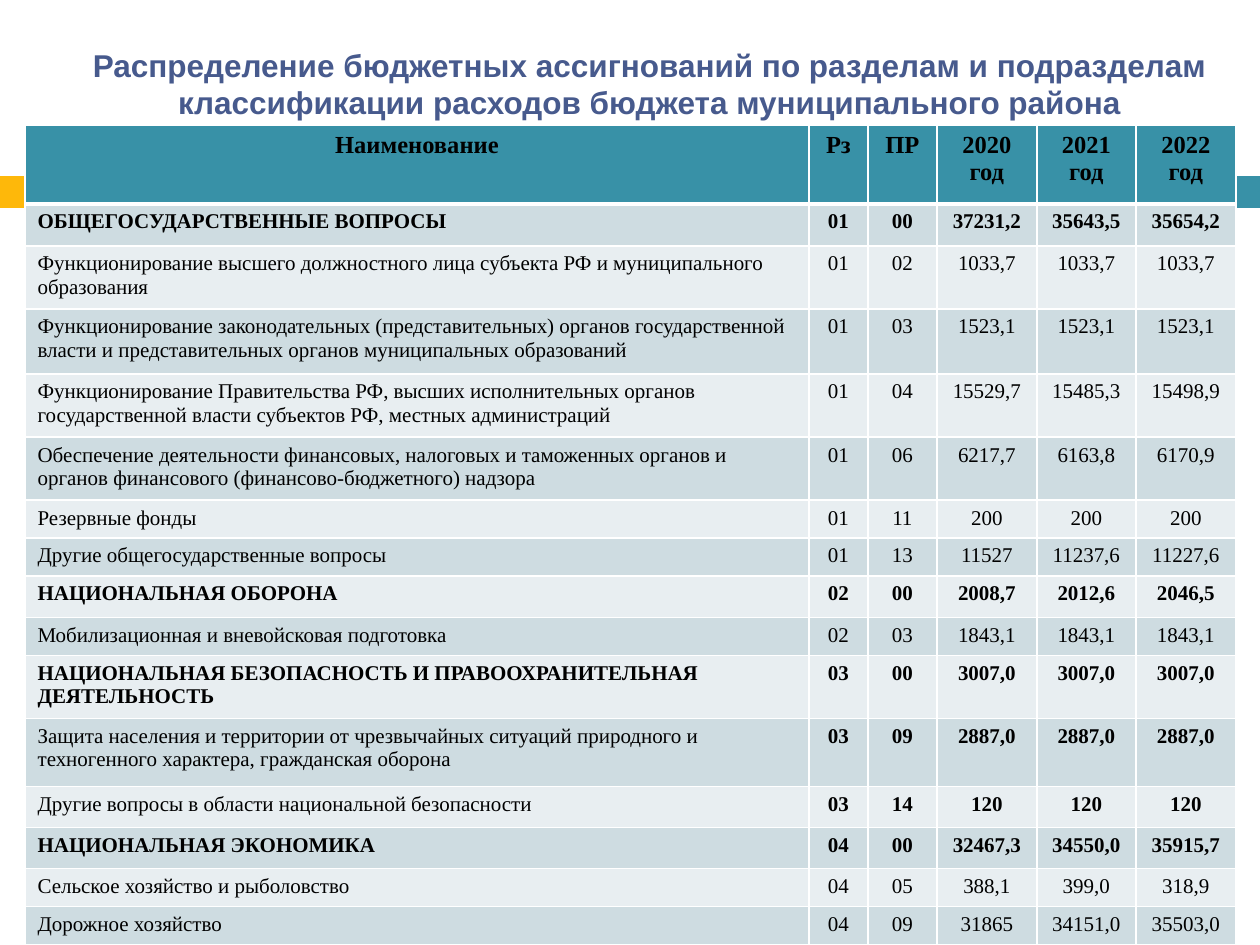
from lxml.etree import SubElement
from pptx import Presentation
from pptx.dml.color import RGBColor
from pptx.enum.shapes import MSO_SHAPE
from pptx.enum.text import MSO_ANCHOR, PP_ALIGN
from pptx.oxml.ns import qn
from pptx.util import Pt

PX = 914400 // 126
WHITE = RGBColor(0xFF, 0xFF, 0xFF)
BLACK = RGBColor(0, 0, 0)
AMBER = RGBColor(0xFE, 0xB8, 0x0A)
TEAL = RGBColor(0x38, 0x91, 0xA7)
NAVY = RGBColor(0x47, 0x5A, 0x8D)
BANDS = (RGBColor(0xCE, 0xDC, 0xE1), RGBColor(0xE8, 0xEE, 0xF1))

TITLE = ("Распределение бюджетных ассигнований по разделам и подразделам "
         "классификации расходов бюджета муниципального района")
HEADER = ("Наименование", "Рз", "ПР", "2020 год", "2021 год", "2022 год")
BUDGET = [
    ("ОБЩЕГОСУДАРСТВЕННЫЕ ВОПРОСЫ", "01", "00", "37231,2", "35643,5", "35654,2"),
    ("Функционирование высшего должностного лица субъекта РФ и муниципального образования",
     "01", "02", "1033,7", "1033,7", "1033,7"),
    ("Функционирование законодательных (представительных) органов государственной власти "
     "и представительных органов муниципальных образований",
     "01", "03", "1523,1", "1523,1", "1523,1"),
    ("Функционирование Правительства РФ, высших исполнительных органов государственной "
     "власти субъектов РФ, местных администраций",
     "01", "04", "15529,7", "15485,3", "15498,9"),
    ("Обеспечение деятельности финансовых, налоговых и таможенных органов и органов "
     "финансового (финансово-бюджетного) надзора",
     "01", "06", "6217,7", "6163,8", "6170,9"),
    ("Резервные фонды", "01", "11", "200", "200", "200"),
    ("Другие общегосударственные вопросы", "01", "13", "11527", "11237,6", "11227,6"),
    ("НАЦИОНАЛЬНАЯ ОБОРОНА", "02", "00", "2008,7", "2012,6", "2046,5"),
    ("Мобилизационная и вневойсковая подготовка", "02", "03", "1843,1", "1843,1", "1843,1"),
    ("НАЦИОНАЛЬНАЯ БЕЗОПАСНОСТЬ И ПРАВООХРАНИТЕЛЬНАЯ ДЕЯТЕЛЬНОСТЬ",
     "03", "00", "3007,0", "3007,0", "3007,0"),
    ("Защита населения и территории от чрезвычайных ситуаций природного и техногенного "
     "характера, гражданская оборона",
     "03", "09", "2887,0", "2887,0", "2887,0"),
    ("Другие вопросы в области национальной безопасности", "03", "14", "120", "120", "120"),
    ("НАЦИОНАЛЬНАЯ ЭКОНОМИКА", "04", "00", "32467,3", "34550,0", "35915,7"),
    ("Сельское хозяйство и рыболовство", "04", "05", "388,1", "399,0", "318,9"),
    ("Дорожное хозяйство", "04", "09", "31865", "34151,0", "35503,0"),
]
COLUMN_WIDTHS = (784, 59, 69, 100, 99, 100)
ROW_HEIGHTS = (79, 42, 59, 65, 59, 59, 36, 36, 42, 37, 59, 68, 41, 41, 36, 35)
STRIPES = [((0, 176, 73, 32), AMBER), ((82, 176, 1178, 32), TEAL)]
TITLE_BOX = (54, 32, 1191, 103)
TABLE_LEFT, TABLE_TOP = 25, 125


def emu(*lengths):
    return [length * PX for length in lengths]


def style_text(paragraph, font_name, size, color, bold, align):
    paragraph.alignment = align
    font = paragraph.runs[0].font
    font.name, font.size, font.bold = font_name, Pt(size), bold
    font.color.rgb = color


def add_border(cell, index, side, width):
    properties = cell._tc.get_or_add_tcPr()
    line = SubElement(properties, qn(f"a:ln{side}"), w=str(Pt(width)))
    fill = SubElement(line, qn("a:solidFill"))
    SubElement(fill, qn("a:srgbClr"), val=str(WHITE))
    properties.insert(index, line)


def fill_cell(cell, text, row, column, bold):
    cell.text_frame.text = text
    centred = row == 0 or column > 0
    style_text(cell.text_frame.paragraphs[0], "Times New Roman", 14 if row == 0 else 12,
               BLACK, bold, PP_ALIGN.CENTER if centred else PP_ALIGN.LEFT)
    cell.fill.solid()
    cell.fill.fore_color.rgb = TEAL if row == 0 else BANDS[(row - 1) % 2]
    widths = {"L": 1, "R": 1, "T": 3 if row == 1 else 1, "B": 3 if row == 0 else 1}
    for index, (side, width) in enumerate(widths.items()):
        add_border(cell, index, side, width)


def is_bold(row, column, section, subsection):
    return row == 0 or subsection == "00" or (section == "03" and column > 0)


def main():
    deck = Presentation()
    deck.slide_width, deck.slide_height = emu(1260, 945)
    slide = deck.slides.add_slide(deck.slide_layouts[6])

    for box, color in STRIPES:
        stripe = slide.shapes.add_shape(MSO_SHAPE.RECTANGLE, *emu(*box))
        stripe.shadow.inherit = False
        stripe.fill.solid()
        stripe.fill.fore_color.rgb = color
        stripe.line.fill.background()

    title = slide.shapes.add_textbox(*emu(*TITLE_BOX)).text_frame
    title.word_wrap = True
    title.vertical_anchor = MSO_ANCHOR.MIDDLE
    title.text = TITLE
    style_text(title.paragraphs[0], "Arial", 18, NAVY, True, PP_ALIGN.CENTER)

    rows = [HEADER, *BUDGET]
    table = slide.shapes.add_table(
        len(rows), len(HEADER),
        *emu(TABLE_LEFT, TABLE_TOP, sum(COLUMN_WIDTHS), sum(ROW_HEIGHTS))).table
    for column, width in zip(table.columns, emu(*COLUMN_WIDTHS)):
        column.width = width
    for row, height in zip(table.rows, emu(*ROW_HEIGHTS)):
        row.height = height
    for r, values in enumerate(rows):
        for c, text in enumerate(values):
            fill_cell(table.cell(r, c), text, r, c, is_bold(r, c, values[1], values[2]))

    deck.save("out.pptx")


if __name__ == "__main__":
    main()
